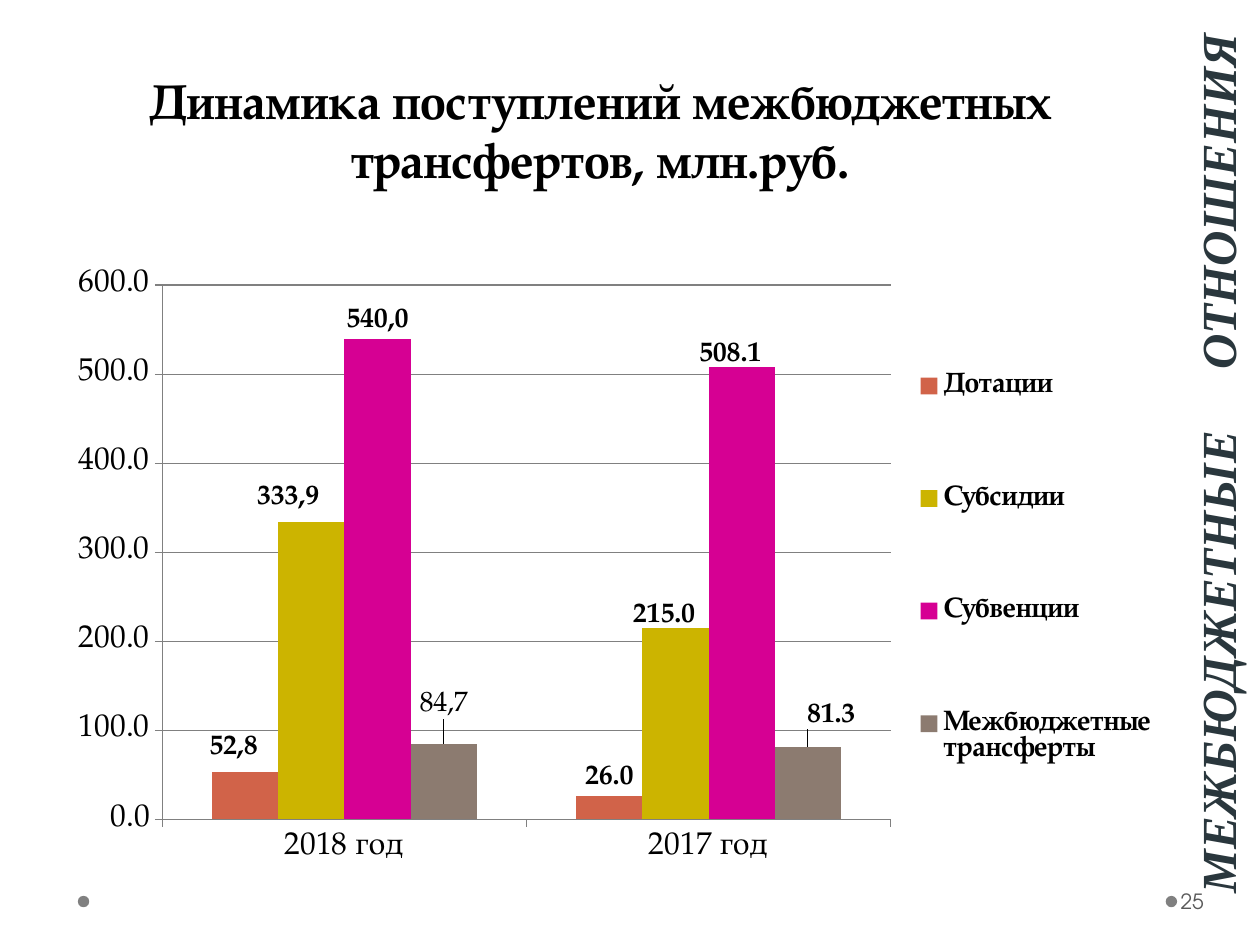
from lxml.etree import SubElement
from pptx import Presentation
from pptx.chart.data import CategoryChartData
from pptx.dml.color import RGBColor
from pptx.enum.chart import XL_CHART_TYPE, XL_LABEL_POSITION, XL_LEGEND_POSITION, XL_TICK_MARK
from pptx.enum.shapes import MSO_SHAPE
from pptx.enum.text import MSO_ANCHOR, MSO_AUTO_SIZE, PP_ALIGN
from pptx.oxml import parse_xml
from pptx.oxml.ns import nsdecls, qn
from pptx.util import Cm, Pt

BLACK = RGBColor(0x00, 0x00, 0x00)
GRAY = RGBColor(0x80, 0x80, 0x80)
NUMBER_GRAY = RGBColor(0x59, 0x59, 0x59)
SLATE = RGBColor(0x2A, 0x37, 0x3D)

SERIF = "TeX Gyre Pagella"
SANS = "TeX Gyre Adventor"
TIMES = "Times New Roman"

YEARS = ["2018 год", "2017 год"]
# name, values, colour, 2018 label, label shifts as fractions of the chart
TRANSFERS = [
    ("Дотации", (52.8, 26), RGBColor(0xD1, 0x63, 0x49), "52,8", [(-0.01, -0.01), (0, 0)]),
    ("Субсидии", (333.9, 215), RGBColor(0xCC, 0xB4, 0x00), "333,9", [(-0.02, -0.01), (-0.01, 0.01)]),
    ("Субвенции", (540, 508.1), RGBColor(0xD6, 0x00, 0x93), "540,0", [(0, 0), (-0.01, 0.01)]),
    ("Межбюджетные трансферты", (84.7, 81.3), RGBColor(0x8C, 0x7B, 0x70), "84,7",
     [(0, -0.03), (0.02, -0.02)]),
]


def set_font(font, name, size, color, bold=False, italic=False):
    font.name, font.size = name, Pt(size)
    font.bold, font.italic = bold, italic
    font.color.rgb = color


def manual_layout(**values):
    """Return a c:layout element; the keywords are its children in schema order."""
    layout = parse_xml(f"<c:layout {nsdecls('c')}><c:manualLayout/></c:layout>")
    for tag, val in values.items():
        SubElement(layout[0], qn(f"c:{tag}")).set("val", str(val))
    return layout


def add_title(s, text):
    title = s.shapes.title
    title.left, title.top, title.width, title.height = Cm(1.09), Cm(0.53), Cm(22.02), Cm(3.4)
    tf = title.text_frame
    tf.text = text
    tf.auto_size = MSO_AUTO_SIZE.NONE
    tf.vertical_anchor = MSO_ANCHOR.BOTTOM
    p = tf.paragraphs[0]
    p.alignment = PP_ALIGN.CENTER
    set_font(p.font, SERIF, 28, BLACK, bold=True)


def add_dot(s, left):
    dot = s.shapes.add_shape(MSO_SHAPE.OVAL, Cm(left), Cm(18.06), Cm(0.23), Cm(0.23))
    dot.shadow.inherit = False
    dot.fill.solid()
    dot.fill.fore_color.rgb = GRAY
    dot.line.fill.background()


def add_page_number(s, number):
    tf = s.shapes.add_textbox(Cm(23.72), Cm(17.65), Cm(1.55), Cm(1.02)).text_frame
    tf.word_wrap = True
    tf.vertical_anchor = MSO_ANCHOR.MIDDLE
    tf.margin_left = Cm(0.08)
    tf.margin_right = Cm(0.13)
    p = tf.paragraphs[0]
    p.text = number
    set_font(p.font, SANS, 12, NUMBER_GRAY)


def add_side_heading(s, first, second):
    """Add two words running up the right edge, with a widened space between them."""
    sp = s.shapes.add_textbox(Cm(14.76), Cm(8.33), Cm(18.72), Cm(2.03))
    sp.rotation = 270
    tf = sp.text_frame
    tf.word_wrap = True
    tf.vertical_anchor = MSO_ANCHOR.BOTTOM
    tf.margin_left = tf.margin_right = Cm(0.13)
    tf.margin_top = tf.margin_bottom = 0
    p = tf.paragraphs[0]
    p.alignment = PP_ALIGN.CENTER
    set_font(p.font, TIMES, 28, SLATE, bold=True, italic=True)
    for text in (first, " ", second):
        r = p.add_run()
        r.text = text
        if text == " ":
            r.font._element.set("spc", "2800")


def format_axes(chart):
    for axis in (chart.category_axis, chart.value_axis):
        axis.major_tick_mark = XL_TICK_MARK.OUTSIDE
        axis.format.line.color.rgb = GRAY
        set_font(axis.tick_labels.font, SERIF, 18, BLACK)
    axis = chart.value_axis
    axis.minimum_scale, axis.maximum_scale, axis.major_unit = 0, 600, 100
    axis.tick_labels.number_format = "#,##0.0"
    axis.tick_labels.number_format_is_linked = False
    axis.major_gridlines.format.line.color.rgb = GRAY


def format_labels(series, first_label, shifts):
    labels = series.data_labels
    labels.show_value = True
    labels.number_format = "0.0"
    labels.number_format_is_linked = False
    labels.position = XL_LABEL_POSITION.OUTSIDE_END
    set_font(labels.font, SERIF, 16, BLACK, bold=True)
    for i in range(len(shifts)):
        label = series.points[i].data_label
        if i == 0:
            r = label.text_frame.paragraphs[0].add_run()
            r.text = first_label
            set_font(r.font, SERIF, 16, BLACK, bold=first_label != "84,7")
        else:
            set_font(label.font, SERIF, 16, BLACK, bold=True)
        label.position = XL_LABEL_POSITION.OUTSIDE_END
    for idx, (x, y) in zip(series._element.xpath("c:dLbls/c:dLbl/c:idx"), shifts):
        for old in idx.getparent().findall(qn("c:layout")):
            idx.getparent().remove(old)
        idx.addnext(manual_layout(x=x, y=y))


def place_plot_and_legend(chart):
    chart.has_legend = True
    legend = chart.legend
    legend.position = XL_LEGEND_POSITION.RIGHT
    legend.include_in_layout = False
    set_font(legend.font, SERIF, 16, BLACK, bold=True)
    for old in legend._element.findall(qn("c:layout")):
        legend._element.remove(old)
    legend._element.find(qn("c:legendPos")).addnext(
        manual_layout(xMode="edge", yMode="edge", x=0.77, y=0.05, w=0.22, h=0.88))
    area = chart._chartSpace.chart.plotArea
    for old in area.findall(qn("c:layout")):
        area.remove(old)
    area.insert(0, manual_layout(layoutTarget="inner", xMode="edge", yMode="edge",
                                 x=0.127, y=0.048, w=0.628, h=0.835))


def add_transfer_chart(s):
    data = CategoryChartData(number_format="0.0")
    data.categories = YEARS
    for name, values, *_ in TRANSFERS:
        data.add_series(name, values)
    chart = s.shapes.add_chart(XL_CHART_TYPE.COLUMN_CLUSTERED, Cm(0.3), Cm(5.13),
                               Cm(23.39), Cm(12.9), data).chart
    chart.has_title = False
    set_font(chart.font, SERIF, 18, BLACK)
    format_axes(chart)
    plot = chart.plots[0]
    plot.gap_width, plot.overlap = 150, 0
    plot.vary_by_categories = False
    for series, (_, _, color, first_label, shifts) in zip(plot.series, TRANSFERS):
        series.format.fill.solid()
        series.format.fill.fore_color.rgb = color
        format_labels(series, first_label, shifts)
    place_plot_and_legend(chart)


def main():
    prs = Presentation()
    prs.slide_width, prs.slide_height = Cm(25.4), Cm(19.05)
    s = prs.slides.add_slide(prs.slide_layouts[5])
    for left in (23.5, 1.57):
        add_dot(s, left)
    add_title(s, "Динамика поступлений межбюджетных трансфертов, млн.руб.")
    add_transfer_chart(s)
    add_page_number(s, "25")
    add_side_heading(s, "МЕЖБЮДЖЕТНЫЕ", "ОТНОШЕНИЯ")
    prs.save("out.pptx")


if __name__ == "__main__":
    main()
